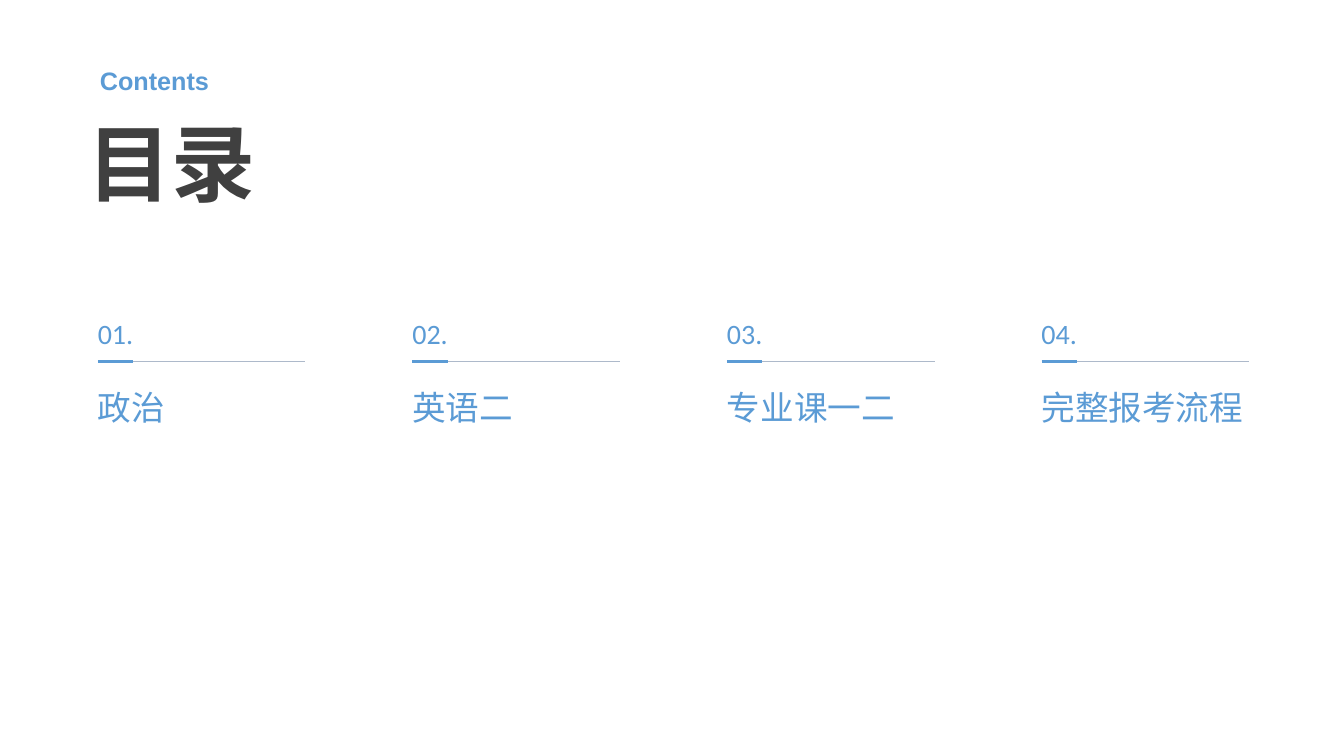
"""Build a contents slide with four numbered sections."""
from dataclasses import dataclass

from pptx import Presentation
from pptx.dml.color import RGBColor
from pptx.enum.shapes import MSO_CONNECTOR
from pptx.enum.text import MSO_ANCHOR, PP_ALIGN
from pptx.oxml.ns import qn
from pptx.shapes.autoshape import Shape
from pptx.slide import Slide
from pptx.util import Inches, Pt


@dataclass(frozen=True)
class Style:
    font: str
    size: float
    color: str
    bold: bool = False


@dataclass(frozen=True)
class Theme:
    accent: str = "5B9BD5"
    rule: str = "ADB9CA"
    title: Style = Style("Arial", 60, "404040", True)
    subtitle: Style = Style("Arial", 18, accent, True)
    number: Style = Style("Calibri", 20, accent)
    heading: Style = Style("Arial", 24, accent)


@dataclass(frozen=True)
class Frame:
    left: float
    top: float
    width: float
    height: float


THEME = Theme()
SECTIONS = ("政治", "英语二", "专业课一二", "完整报考流程")
FIRST_LEFT = 0.97
COLUMN_STEP = 3.12
RULE_TOP = 3.59


def write(box: Shape, frame: Frame, text: str, style: Style,
          anchor: MSO_ANCHOR = MSO_ANCHOR.BOTTOM,
          inset_left: float = 0, inset_right: float = 0) -> None:
    box.left, box.top = Inches(frame.left), Inches(frame.top)
    box.width, box.height = Inches(frame.width), Inches(frame.height)
    body = box.text_frame
    body.word_wrap = True
    body.vertical_anchor = anchor
    body.margin_left, body.margin_right = Inches(inset_left), Inches(inset_right)
    body.margin_top = body.margin_bottom = 0
    body.text = text
    para = body.paragraphs[0]
    para.alignment = PP_ALIGN.LEFT
    para.space_before = Pt(0)
    para.font.name = style.font
    para.font.size = Pt(style.size)
    para.font.bold = style.bold
    para.font.color.rgb = RGBColor.from_string(style.color)


def add_text(page: Slide, frame: Frame, text: str, style: Style,
             anchor: MSO_ANCHOR = MSO_ANCHOR.BOTTOM) -> None:
    write(page.shapes.add_textbox(0, 0, 0, 0), frame, text, style, anchor)


def add_rule(page: Slide, left: float, length: float, color: str, weight: float) -> None:
    rule = page.shapes.add_connector(
        MSO_CONNECTOR.STRAIGHT, Inches(left), Inches(RULE_TOP),
        Inches(left + length), Inches(RULE_TOP))
    rule.line.color.rgb = RGBColor.from_string(color)
    rule.line.width = Pt(weight)
    properties = rule._element.spPr
    properties.append(properties.makeelement(qn("a:effectLst"), {}))


def add_section(page: Slide, index: int, heading: str) -> None:
    left = FIRST_LEFT + index * COLUMN_STEP
    add_rule(page, left, 2.06, THEME.rule, 0.75)
    add_rule(page, left, 0.35, THEME.accent, 2.25)
    add_text(page, Frame(left, 2.94, 1, 0.53), f"{index + 1:02}.", THEME.number)
    add_text(page, Frame(left, 3.84, 2.58, 2.04), heading, THEME.heading, MSO_ANCHOR.TOP)


def main() -> None:
    deck = Presentation()
    deck.slide_width, deck.slide_height = Inches(13.33), Inches(7.5)
    page = deck.slides.add_slide(deck.slide_layouts.get_by_name("Section Header"))
    write(page.placeholders[1], Frame(0.87, 0.57, 2.04, 0.38), "Contents",
          THEME.subtitle, inset_left=0.12, inset_right=0.1)
    write(page.shapes.title, Frame(0.87, 0.95, 2.04, 1.16), "目录", THEME.title)
    for index, heading in enumerate(SECTIONS):
        add_section(page, index, heading)
    deck.save("out.pptx")


if __name__ == "__main__":
    main()
